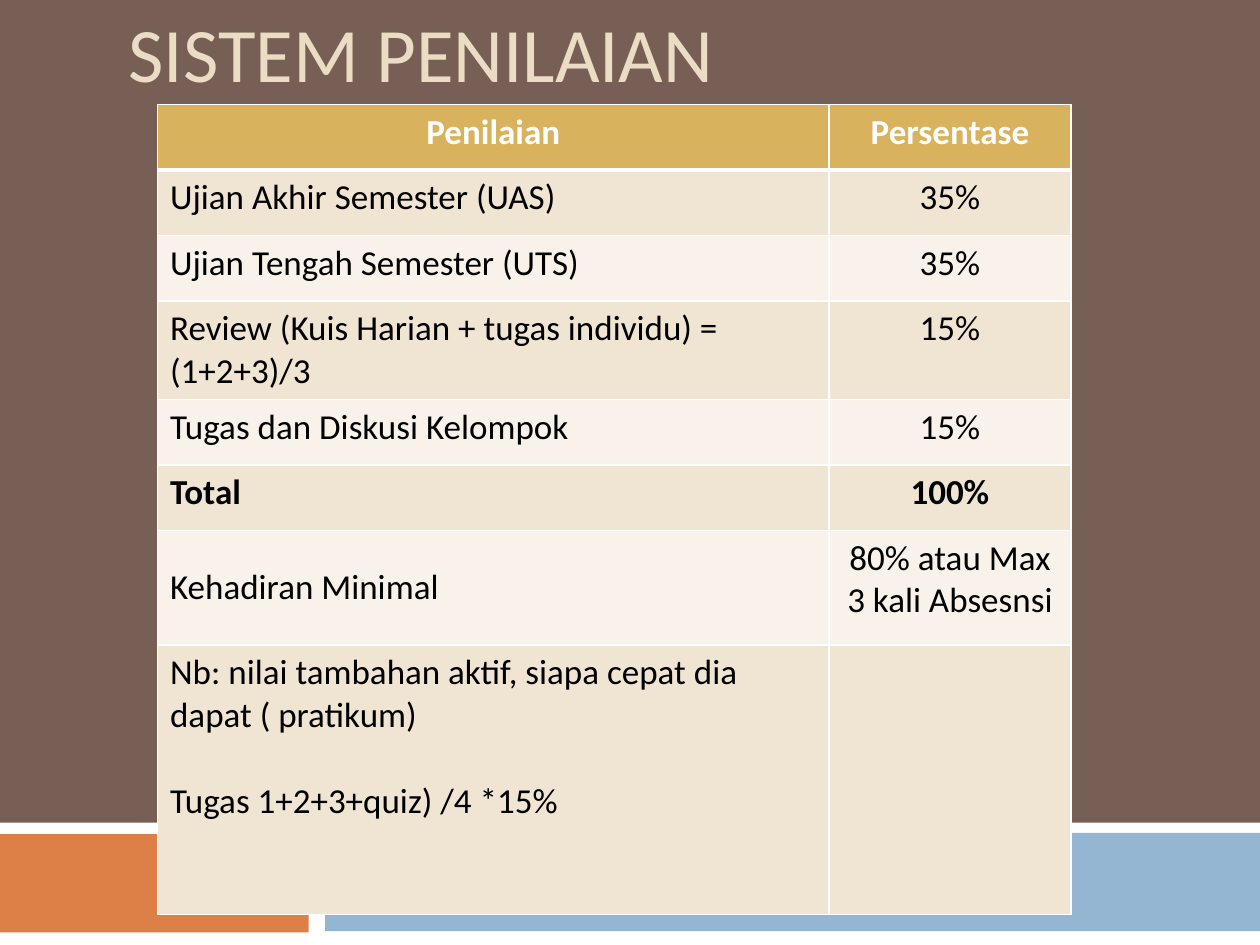
from dataclasses import dataclass

from lxml.etree import SubElement
from pptx import Presentation
from pptx.dml.color import RGBColor
from pptx.enum.shapes import MSO_SHAPE
from pptx.enum.text import MSO_ANCHOR, MSO_AUTO_SIZE, PP_ALIGN
from pptx.oxml.ns import qn
from pptx.util import Inches, Pt


@dataclass(frozen=True)
class Theme:
    font: str = "Calibri"
    background: str = "775F55"
    title: str = "EBDDC3"
    white: str = "FFFFFF"
    text: str = "000000"
    orange: str = "DD8047"
    blue: str = "94B6D2"
    header: str = "D8B25C"
    bands: tuple[str, str] = ("F0E4D2", "F8F2EA")
    title_size: float = 44
    table_size: float = 20
    line_gap: float = 24.4
    border: float = 1
    header_border: float = 3


@dataclass(frozen=True)
class Grid:
    width: int = Inches(10)
    height: int = Inches(7.5)
    column_count: float = 10
    row_count: float = 7.5

    def across(self, columns: float) -> int:
        return round(self.width * columns / self.column_count)

    def down(self, rows: float) -> int:
        return round(self.height * rows / self.row_count)


@dataclass(frozen=True)
class Area:
    left: float
    top: float
    width: float
    height: float

    def place(self) -> tuple[int, int, int, int]:
        return (GRID.across(self.left), GRID.down(self.top),
                GRID.across(self.width), GRID.down(self.height))


@dataclass(frozen=True)
class Bar:
    area: Area
    color: str


@dataclass(frozen=True)
class Grade:
    label: str
    share: str
    height: float = 0.52
    bold: bool = False
    anchor: MSO_ANCHOR = MSO_ANCHOR.TOP


THEME = Theme()
GRID = Grid()
TITLE_AREA = Area(0.92, 0, 8.5, 0.83)
COLUMN_WIDTHS = (5.33, 1.92)
TABLE_LEFT, TABLE_TOP = 1.25, 0.83

BARS = (
    Bar(Area(0, 6.53, 10, 0.97), THEME.white),
    Bar(Area(-0.01, 6.62, 2.46, 0.78), THEME.orange),
    Bar(Area(2.58, 6.61, 7.42, 0.78), THEME.blue),
)

GRADES = (
    Grade("Penilaian", "Persentase", bold=True),
    Grade("Ujian Akhir Semester (UAS)", "35%"),
    Grade("Ujian Tengah Semester (UTS)", "35%"),
    Grade("Review (Kuis Harian + tugas individu) = (1+2+3)/3", "15%", height=0.78),
    Grade("Tugas dan Diskusi Kelompok", "15%"),
    Grade("Total", "100%", bold=True),
    Grade("Kehadiran Minimal", "80% atau Max 3 kali Absesnsi", height=0.91,
          anchor=MSO_ANCHOR.MIDDLE),
    Grade("Nb: nilai tambahan aktif, siapa cepat dia dapat ( pratikum)\n"
          "Tugas 1+2+3+quiz) /4 *15%", "", height=2.14),
)


def style_paragraph(para, size: float, color: str, bold: bool, align: PP_ALIGN) -> None:
    para.alignment = align
    para.font.name = THEME.font
    para.font.size = Pt(size)
    para.font.bold = bold
    para.font.color.rgb = RGBColor.from_string(color)


def add_bar(slide, bar: Bar) -> None:
    shape = slide.shapes.add_shape(MSO_SHAPE.RECTANGLE, *bar.area.place())
    shape.shadow.inherit = False
    shape.fill.solid()
    shape.fill.fore_color.rgb = RGBColor.from_string(bar.color)
    shape.line.fill.background()


def set_title(slide, text: str) -> None:
    title = slide.shapes.title
    title.left, title.top, title.width, title.height = TITLE_AREA.place()
    frame = title.text_frame
    frame.text = text
    frame.auto_size = MSO_AUTO_SIZE.NONE
    frame.vertical_anchor = MSO_ANCHOR.BOTTOM
    style_paragraph(frame.paragraphs[0], THEME.title_size, THEME.title, False, PP_ALIGN.LEFT)


def set_borders(cell, top: float, bottom: float) -> None:
    properties = cell._tc.get_or_add_tcPr()
    widths = {"a:lnL": THEME.border, "a:lnR": THEME.border, "a:lnT": top, "a:lnB": bottom}
    for position, (tag, width) in enumerate(widths.items()):
        line = SubElement(properties, qn(tag), w=str(Pt(width)))
        fill = SubElement(line, qn("a:solidFill"))
        SubElement(fill, qn("a:srgbClr"), val=THEME.white)
        properties.insert(position, line)


def fill_cell(cell, text: str, row: int, centered: bool, grade: Grade) -> None:
    is_header = row == 0
    cell.fill.solid()
    color = THEME.header if is_header else THEME.bands[(row - 1) % 2]
    cell.fill.fore_color.rgb = RGBColor.from_string(color)
    cell.vertical_anchor = MSO_ANCHOR.TOP if centered else grade.anchor
    cell.text = text
    align = PP_ALIGN.CENTER if centered or is_header else PP_ALIGN.LEFT
    for number, para in enumerate(cell.text_frame.paragraphs):
        style_paragraph(para, THEME.table_size, THEME.white if is_header else THEME.text,
                        grade.bold, align)
        if number:
            para.space_before = Pt(THEME.line_gap)
    set_borders(cell, THEME.header_border if row == 1 else THEME.border,
                THEME.header_border if is_header else THEME.border)


def add_grades(slide, grades: tuple[Grade, ...]) -> None:
    area = Area(TABLE_LEFT, TABLE_TOP, sum(COLUMN_WIDTHS), sum(grade.height for grade in grades))
    table = slide.shapes.add_table(len(grades), len(COLUMN_WIDTHS), *area.place()).table
    for column, width in zip(table.columns, COLUMN_WIDTHS):
        column.width = GRID.across(width)
    for row, grade in enumerate(grades):
        table.rows[row].height = GRID.down(grade.height)
        for column, text in enumerate((grade.label, grade.share)):
            fill_cell(table.cell(row, column), text, row, column == 1, grade)


def main() -> None:
    deck = Presentation()
    deck.slide_width, deck.slide_height = GRID.width, GRID.height
    page = deck.slides.add_slide(deck.slide_layouts.get_by_name("Title Only"))
    page.background.fill.solid()
    page.background.fill.fore_color.rgb = RGBColor.from_string(THEME.background)
    for bar in BARS:
        add_bar(page, bar)
    set_title(page, "SISTEM PENILAIAN")
    add_grades(page, GRADES)
    deck.save("out.pptx")


if __name__ == "__main__":
    main()
